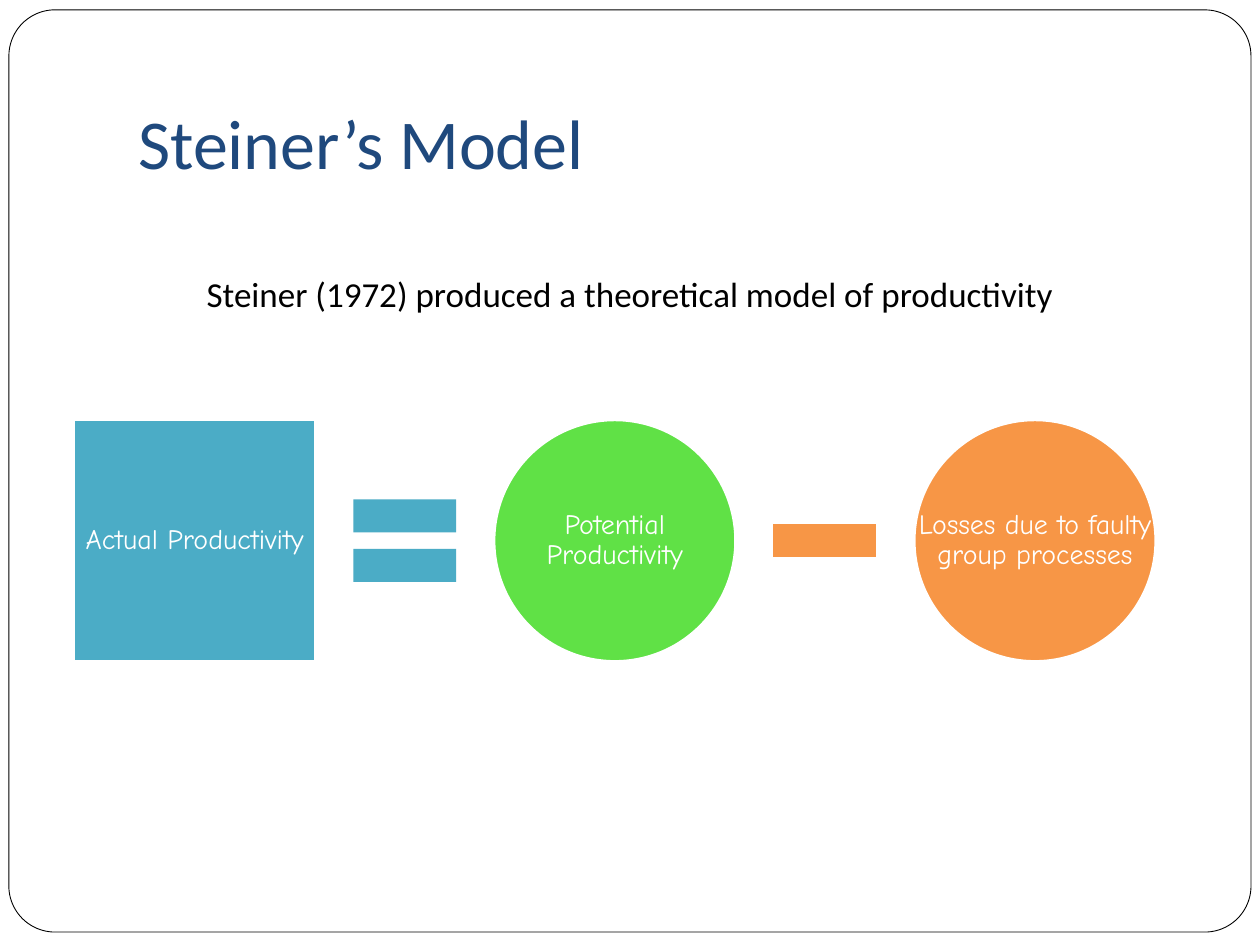
from pptx import Presentation
from pptx.dml.color import RGBColor
from pptx.enum.shapes import MSO_SHAPE
from pptx.enum.text import MSO_ANCHOR, PP_ALIGN
from pptx.util import Cm, Pt

RECTANGLE, CIRCLE = MSO_SHAPE.RECTANGLE, MSO_SHAPE.OVAL
EQUALS, MINUS = MSO_SHAPE.MATH_EQUAL, MSO_SHAPE.MATH_MINUS
ROUNDED = MSO_SHAPE.ROUNDED_RECTANGLE
TOP, MIDDLE, BOTTOM = MSO_ANCHOR.TOP, MSO_ANCHOR.MIDDLE, MSO_ANCHOR.BOTTOM
LEFT, CENTER = PP_ALIGN.LEFT, PP_ALIGN.CENTER

BLACK = RGBColor(0x00, 0x00, 0x00)
WHITE = RGBColor(0xFF, 0xFF, 0xFF)
NAVY = RGBColor(0x1F, 0x49, 0x7D)
TEAL = RGBColor(0x4B, 0xAC, 0xC6)
GREEN = RGBColor(0x60, 0xE1, 0x46)
ORANGE = RGBColor(0xF7, 0x96, 0x46)

TITLE_FONT = {"name": "Calibri", "size": Pt(40), "color": NAVY}
BODY_FONT = {"name": "Calibri", "size": Pt(20), "color": BLACK}
LABEL_FONT = {"name": "Comic Neue", "size": Pt(16), "color": WHITE}

# Equation row, in centimetres
ROW_LEFT, ROW_MIDDLE = 1.5, 10.9
TERM_SIZE, OPERATOR_SIZE, GAP = 4.85, 2.82, 0.4

EQUATION = [
    (RECTANGLE, TEAL, "Actual Productivity"),
    (EQUALS, TEAL, None),
    (CIRCLE, GREEN, "Potential Productivity"),
    (MINUS, ORANGE, None),
    (CIRCLE, ORANGE, "Losses due to faulty group processes"),
]


def add_figure(slide, kind, box, fill, line=None, line_width=1):
    figure = slide.shapes.add_shape(kind, *map(Cm, box))
    figure.shadow.inherit = False
    figure.fill.solid()
    figure.fill.fore_color.rgb = fill
    if line is None:
        figure.line.fill.background()
    else:
        figure.line.color.rgb = line
        figure.line.width = Pt(line_width)
    return figure


def add_text(slide, text, box, font, anchor, align, margin, line_spacing=1.0):
    frame = slide.shapes.add_textbox(*map(Cm, box)).text_frame
    frame_format = {"word_wrap": True, "vertical_anchor": anchor}
    for side in ("left", "top", "right", "bottom"):
        frame_format[f"margin_{side}"] = Cm(margin)
    for name, value in frame_format.items():
        setattr(frame, name, value)
    paragraph = frame.paragraphs[0]
    paragraph.alignment = align
    paragraph.line_spacing = line_spacing
    run = paragraph.add_run()
    run.text = text
    for name, value in font.items():
        if name == "color":
            run.font.color.rgb = value
        else:
            setattr(run.font, name, value)


def add_equation(slide):
    """Lay terms and operators in a row, centred on one line."""
    left = ROW_LEFT
    for kind, color, label in EQUATION:
        size = TERM_SIZE if label else OPERATOR_SIZE
        box = (left, ROW_MIDDLE - size / 2, size, size)
        add_figure(slide, kind, box, color, WHITE if label else None)
        if label:
            add_text(slide, label, box, LABEL_FONT, MIDDLE, CENTER, 0.05, 0.9)
        left += size + GAP


def main():
    deck = Presentation()
    deck.slide_width, deck.slide_height = Cm(25.4), Cm(19.05)
    slide = deck.slides.add_slide(deck.slide_layouts[6])

    border = add_figure(slide, ROUNDED, (0.18, 0.2, 25.04, 18.59), WHITE, BLACK, 0.5)
    border.adjustments[0] = 0.05
    add_text(slide, "Steiner’s Model", (2.54, 0.76, 21.59, 3.18),
             TITLE_FONT, BOTTOM, LEFT, 0.25)
    add_text(slide, "Steiner (1972) produced a theoretical model of productivity",
             (0.7, 5.36, 24, 1.2), BODY_FONT, TOP, CENTER, 0.13)
    add_equation(slide)
    deck.save("out.pptx")


if __name__ == "__main__":
    main()
